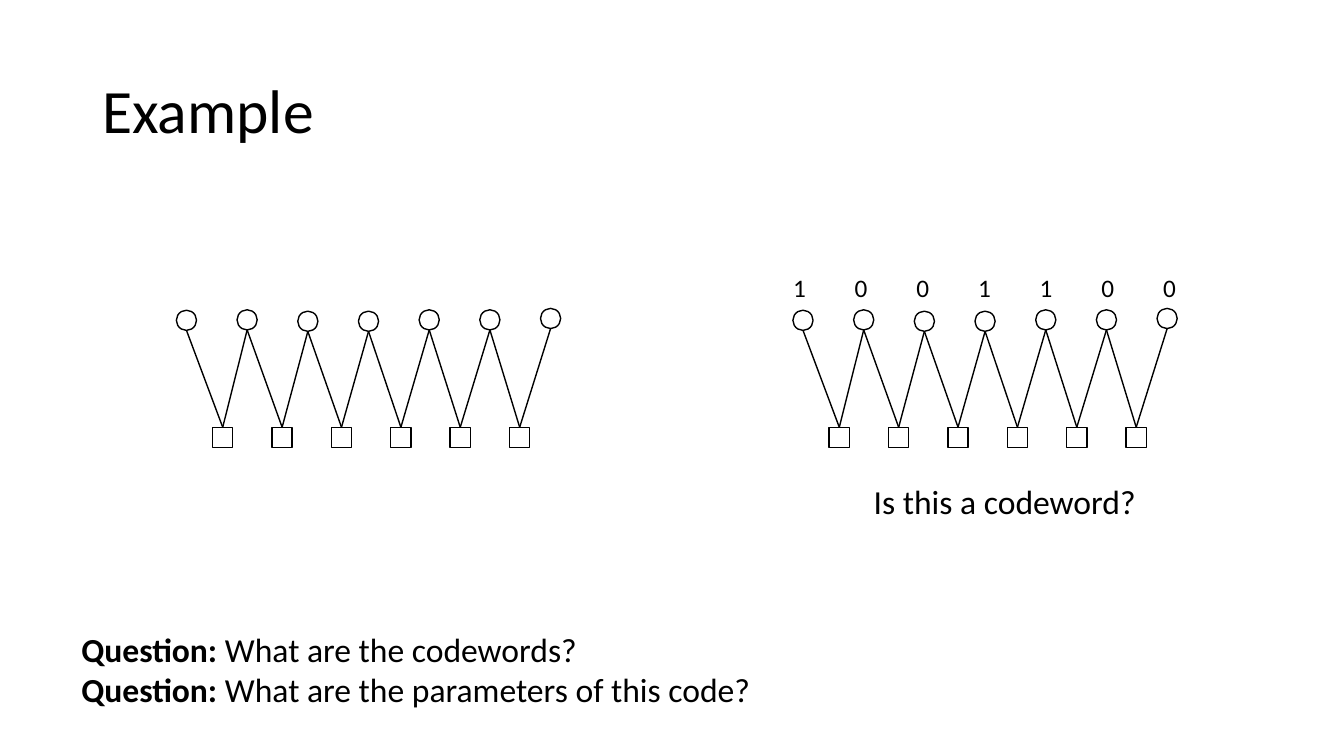
from dataclasses import dataclass

from lxml import etree
from pptx import Presentation
from pptx.dml.color import RGBColor
from pptx.enum import shapes, text
from pptx.oxml import ns
from pptx.shapes import autoshape, shapetree
from pptx.util import Pt

HUES = {"ink": "000000", "paper": "FFFFFF"}
FONT = "Calibri"
SIDE = 14.4
BIT_GAP = 43.35
CHECK_GAP = 42.42
CHECK_TOP = 305.2
BIT_TOPS = (221.6, 221.3, 222.3, 222.3, 221.3, 221.3, 220.3)
LABEL_GAP = 44.05


@dataclass
class Box:
    left: float
    top: float
    width: float
    height: float


@dataclass
class Run:
    words: str
    bold: bool = False


@dataclass
class Label:
    box: Box
    lines: list[list[Run]]
    size: float
    wrap: bool = False
    fit: bool = True
    middle: bool = False
    spacing: float = 1.0


@dataclass
class Graph:
    left: float
    word: str = ""


def hue(name: str) -> RGBColor:
    return RGBColor.from_string(HUES[name])


def add_label(tree: shapetree._BaseGroupShapes, label: Label) -> None:
    box = label.box
    frame = tree.add_textbox(Pt(box.left), Pt(box.top), Pt(box.width), Pt(box.height)).text_frame
    frame.word_wrap = label.wrap
    if label.fit:
        frame.auto_size = text.MSO_AUTO_SIZE.SHAPE_TO_FIT_TEXT
    if label.middle:
        frame.vertical_anchor = text.MSO_ANCHOR.MIDDLE
    for num, line in enumerate(label.lines):
        para = frame.add_paragraph() if num else frame.paragraphs[0]
        para.line_spacing = label.spacing
        for part in line:
            run = para.add_run()
            run.text = part.words
            run.font.name = FONT
            run.font.size = Pt(label.size)
            run.font.bold = part.bold
            run.font.color.rgb = hue("ink")


def add_node(tree: shapetree._BaseGroupShapes, kind: shapes.MSO_SHAPE,
             left: float, top: float) -> autoshape.Shape:
    node = tree.add_shape(kind, Pt(left), Pt(top), Pt(SIDE), Pt(SIDE))
    node.shadow.inherit = False
    node.fill.solid()
    node.fill.fore_color.rgb = hue("paper")
    node.line.color.rgb = hue("ink")
    node.line.width = Pt(1)
    return node


def add_edge(tree: shapetree._BaseGroupShapes, check: autoshape.Shape,
             bit: autoshape.Shape) -> None:
    edge = tree.add_connector(
        shapes.MSO_CONNECTOR.STRAIGHT, check.left + check.width // 2, check.top,
        bit.left + bit.width // 2, bit.top + bit.height)
    edge.begin_connect(check, 0)
    edge.line.color.rgb = hue("ink")
    edge.line.width = Pt(1)
    etree.SubElement(edge._element.spPr, ns.qn("a:effectLst"))


def add_graph(tree: shapetree._BaseGroupShapes, graph: Graph) -> None:
    group = tree.add_group_shape().shapes
    bits = [add_node(group, shapes.MSO_SHAPE.OVAL, graph.left + i * BIT_GAP, top)
            for i, top in enumerate(BIT_TOPS)]
    checks = [add_node(group, shapes.MSO_SHAPE.RECTANGLE,
                       graph.left + 25.9 + i * CHECK_GAP, CHECK_TOP)
              for i in range(len(bits) - 1)]
    for i, check in enumerate(checks):
        for bit in bits[i:i + 2]:
            add_edge(group, check, bit)
    for i, digit in enumerate(graph.word):
        box = Box(graph.left - 7 + i * LABEL_GAP, 190.8, 23, 29)
        add_label(group, Label(box, [[Run(digit)]], 18, wrap=True))


GRAPHS = [Graph(126), Graph(566.4, "1001100")]
LABELS = [
    Label(Box(66, 28.8, 828, 104.4), [[Run("Example")]], 44,
          wrap=True, fit=False, middle=True, spacing=0.9),
    Label(Box(617, 339.8, 203, 36), [[Run("Is this a codeword?")]], 24),
    Label(Box(51, 445.7, 497, 65.5), [
        [Run("Question:", True), Run(" What are the codewords?")],
        [Run("Question:", True), Run(" What are the parameters of this code?")],
    ], 24),
]


def main() -> None:
    deck = Presentation()
    deck.slide_width = Pt(960)
    deck.slide_height = Pt(540)
    tree = deck.slides.add_slide(deck.slide_layouts[6]).shapes
    for graph in GRAPHS:
        add_graph(tree, graph)
    for label in LABELS:
        add_label(tree, label)
    deck.save("out.pptx")


if __name__ == "__main__":
    main()
